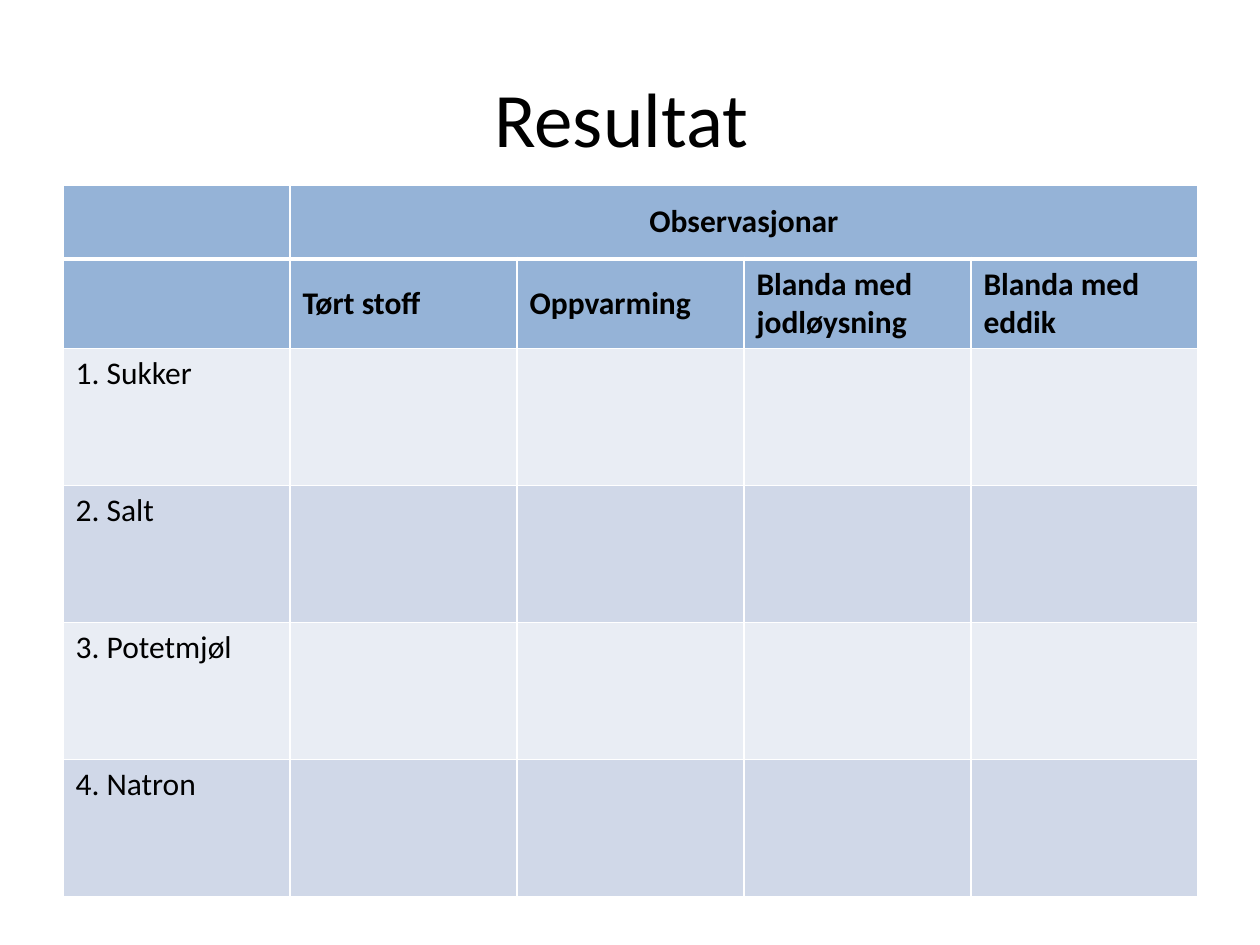
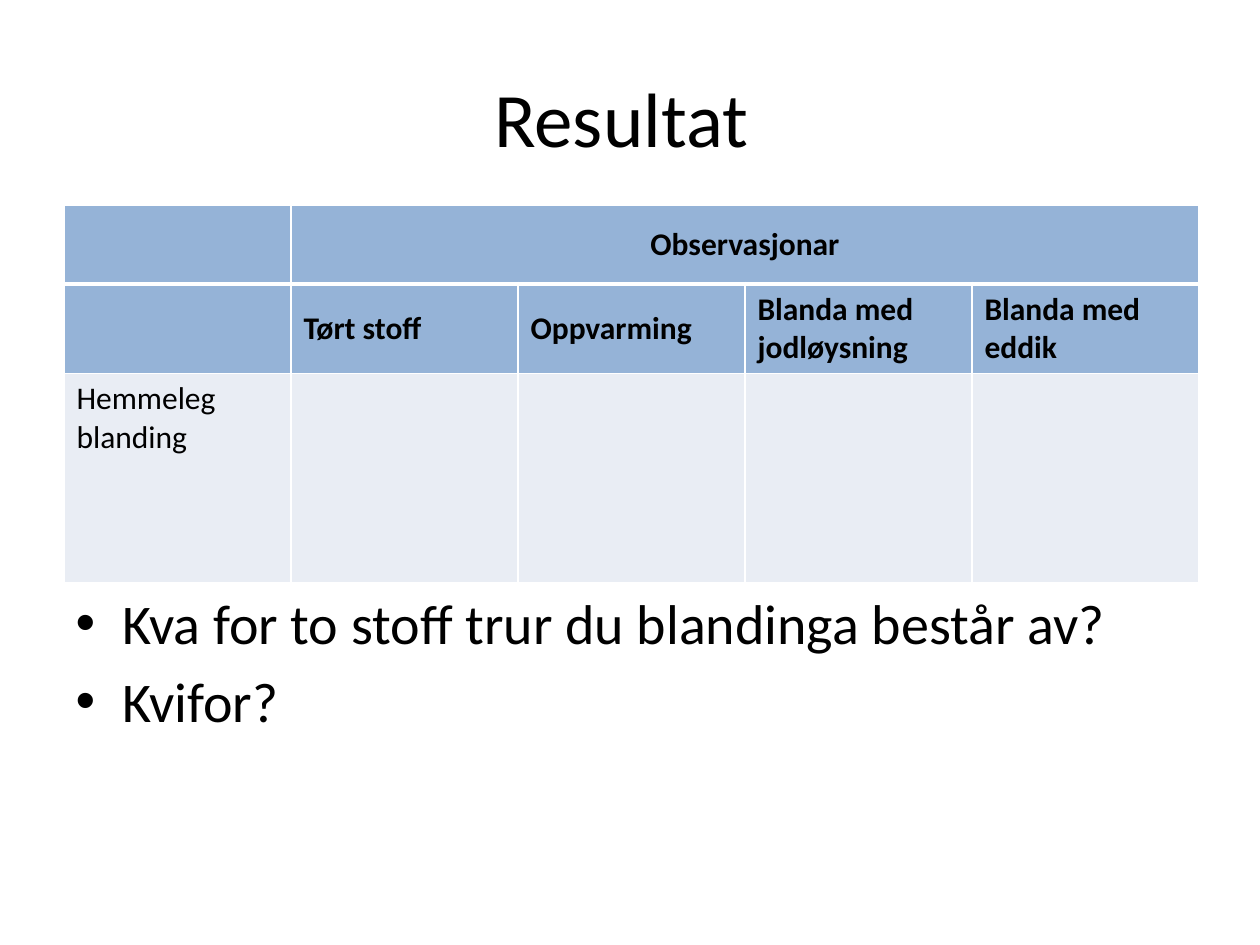
from lxml import etree
from pptx import Presentation, util as u
from pptx.dml.color import RGBColor
from pptx.enum import text
from pptx.oxml import ns

# Shared look
FONT = "Calibri"
BLACK = RGBColor(0x00, 0x00, 0x00)
WHITE = RGBColor(0xFF, 0xFF, 0xFF)
HEADER = RGBColor(0x95, 0xB3, 0xD7)
BANDS = RGBColor(0xE9, 0xED, 0xF4), RGBColor(0xD0, 0xD8, 0xE8)

TITLE_BOX = 63, 38, 1134, 158
COL_W = 227
COLUMNS = ["Tørt stoff", "Oppvarming", "Blanda med jodløysning", "Blanda med eddik"]
TITLE_ONLY, TITLE_AND_BODY = 5, 1


def px(n):
    return u.Emu(n * 914400 // 126)


def write(p, content, size=18, bold=False, align=None, before=0):
    p.alignment = align
    p.space_before = u.Pt(before)
    r = p.add_run()
    r.text = content
    r.font.name, r.font.size, r.font.bold = FONT, u.Pt(size), bold
    r.font.color.rgb = BLACK


def place(sp, box):
    sp.left, sp.top, sp.width, sp.height = map(px, box)
    sp.text_frame.auto_size = text.MSO_AUTO_SIZE.NONE


def add_slide(prs, layout, title):
    s = prs.slides.add_slide(prs.slide_layouts[layout])
    place(s.shapes.title, TITLE_BOX)
    tf = s.shapes.title.text_frame
    tf.vertical_anchor = text.MSO_ANCHOR.MIDDLE
    write(tf.paragraphs[0], title, size=44, align=text.PP_ALIGN.CENTER)
    return s


def add_bullets(s, box, items):
    """The body placeholder brings the bullets and the hanging indent."""
    sp = s.placeholders[1]
    place(sp, box)
    tf = sp.text_frame
    for i, item in enumerate(items):
        p = tf.add_paragraph() if i else tf.paragraphs[0]
        write(p, item, size=32, before=6.4 if i else 0)


def set_borders(cell, **widths):
    """Widths in points by side: L, R, T, B."""
    tc_pr = cell._tc.get_or_add_tcPr()
    for side, width in widths.items():
        ln = etree.SubElement(tc_pr, ns.qn("a:ln" + side), w=str(u.Pt(width)))
        fill = etree.SubElement(ln, ns.qn("a:solidFill"))
        etree.SubElement(fill, ns.qn("a:srgbClr"), val=str(WHITE))


def add_observations(s, left, top, heights, samples):
    """Two header rows, then one banded row for each sample."""
    n_cols = len(COLUMNS) + 1
    frame = s.shapes.add_table(len(heights), n_cols, px(left), px(top),
                               px(COL_W * n_cols), px(sum(heights)))
    table = frame.table
    for col in table.columns:
        col.width = px(COL_W)
    for row, height in zip(table.rows, heights):
        row.height = px(height)

    # Fills and borders, with a heavy rule between the header rows
    for i, row in enumerate(table.rows):
        for cell in row.cells:
            set_borders(cell, L=1, R=1, T=3 if i == 1 else 1, B=3 if i == 0 else 1)
            cell.fill.solid()
            cell.fill.fore_color.rgb = HEADER if i < 2 else BANDS[i % 2]

    # Headings
    group = table.cell(0, 1)
    group.merge(table.cell(0, n_cols - 1))
    group.vertical_anchor = text.MSO_ANCHOR.MIDDLE
    write(group.text_frame.paragraphs[0], "Observasjonar", bold=True,
          align=text.PP_ALIGN.CENTER)
    for j, heading in enumerate(COLUMNS, 1):
        cell = table.cell(1, j)
        cell.vertical_anchor = text.MSO_ANCHOR.MIDDLE
        write(cell.text_frame.paragraphs[0], heading, bold=True)

    # Samples
    for i, sample in enumerate(samples, 2):
        write(table.cell(i, 0).text_frame.paragraphs[0], sample)


def main():
    prs = Presentation()
    prs.slide_width, prs.slide_height = u.Inches(10), u.Inches(7.5)

    # Known substances
    s = add_slide(prs, TITLE_ONLY, "Resultat ")
    add_observations(s, 63, 185, [74, 82] + [137] * 4,
                     ["1. Sukker", "2. Salt", "3. Potetmjøl", "4. Natron"])

    # Secret mixture
    s = add_slide(prs, TITLE_AND_BODY, "Resultat ")
    add_bullets(s, (63, 582, 1134, 262),
                ["Kva for to stoff trur du blandinga består av?", "Kvifor?"])
    add_observations(s, 64, 205, [79, 79, 209], ["Hemmeleg blanding"])

    prs.save("out.pptx")


if __name__ == "__main__":
    main()
